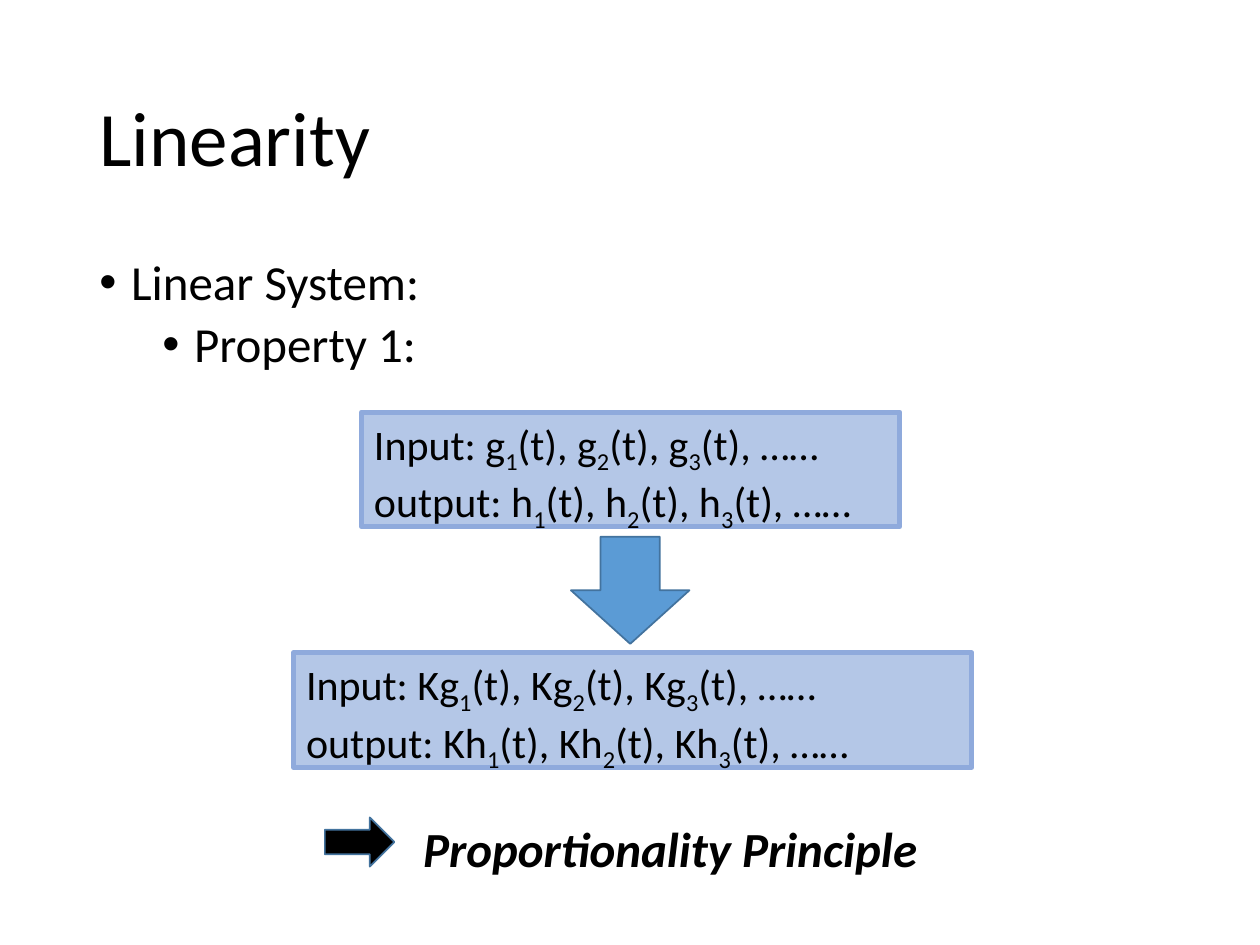
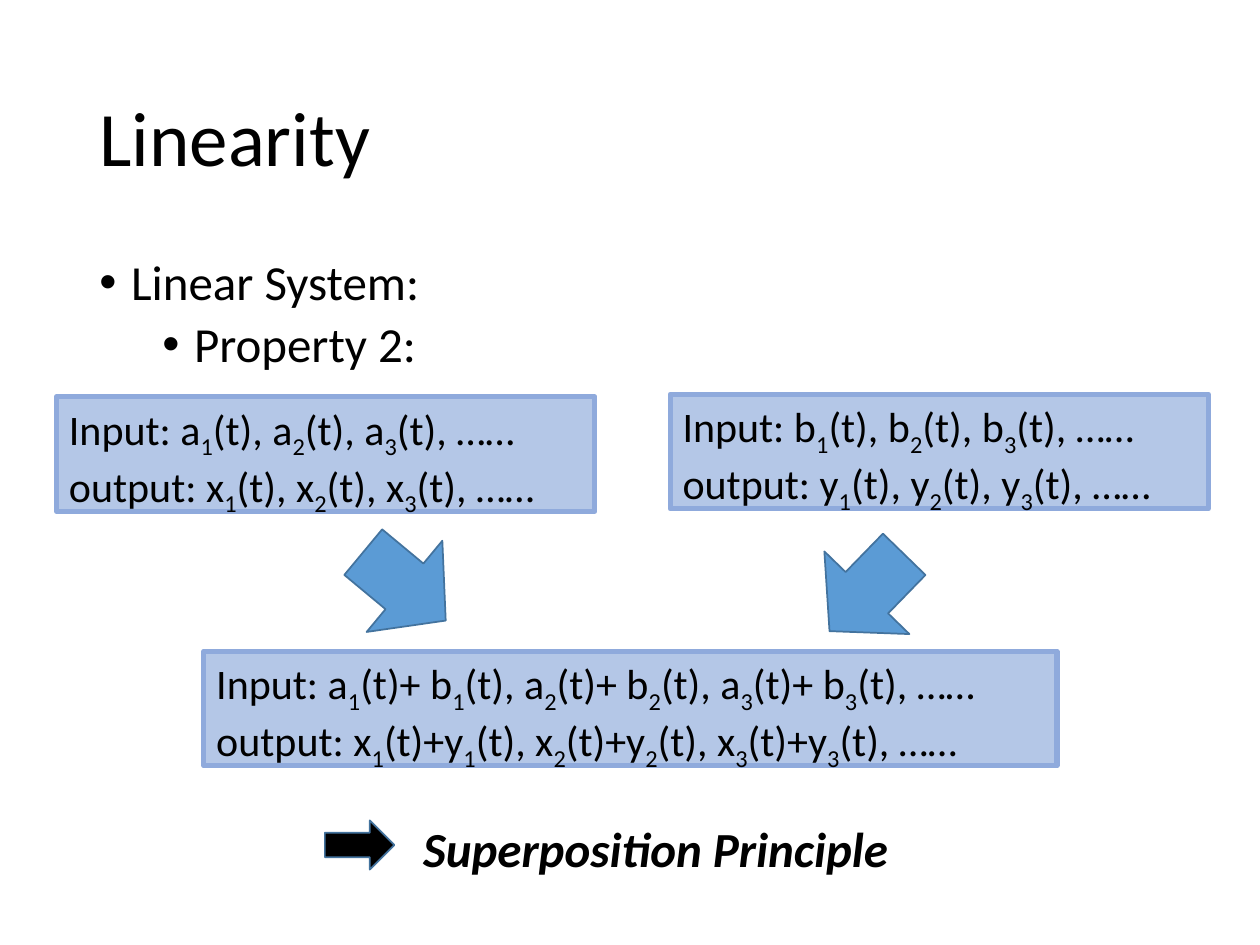
from itertools import groupby

from lxml.etree import SubElement
from pptx import Presentation
from pptx.dml.color import RGBColor
from pptx.enum.shapes import MSO_SHAPE
from pptx.enum.text import MSO_ANCHOR, MSO_AUTO_SIZE, PP_ALIGN
from pptx.oxml.ns import qn
from pptx.util import Cm, Pt

COLORS = {
    "text": "000000",
    "box": "B4C7E7",
    "edge": "8FAADC",
    "arrow": "5B9BD5",
    "rim": "43739E",
}
TITLE = {"size": Pt(44), "name": "Calibri"}
LIST = {"size": Pt(28), "name": "Calibri"}
MATH = {"size": Pt(24), "name": "Calibri"}
CLAIM = {"size": Pt(28), "name": "Calibri", "bold": True, "italic": True}
BOX_WIDTH, BOX_HEIGHT = 10.85, 2.31


def color(key):
    return RGBColor.from_string(COLORS[key])


def apply(target, values):
    for name, value in values.items():
        setattr(target, name, value)


def style(font, values):
    apply(font, values)
    font.color.rgb = color("text")


def place(shape, left, top, width, height):
    sizes = {"left": left, "top": top, "width": width, "height": height}
    apply(shape, {name: Cm(value) for name, value in sizes.items()})


def bullet(par, indent):
    props = par._p.get_or_add_pPr()
    props.set("marL", str(Cm(indent)))
    props.set("indent", str(-Cm(0.64)))
    SubElement(props, qn("a:buFont"), typeface="Arial")
    SubElement(props, qn("a:buChar"), char="•")


def add_title(slide, text):
    title = slide.shapes.title
    place(title, 1.75, 1.02, 21.9, 3.68)
    title.text_frame.vertical_anchor = MSO_ANCHOR.MIDDLE
    par = title.text_frame.paragraphs[0]
    apply(par, {"text": text, "alignment": PP_ALIGN.LEFT, "line_spacing": 0.9})
    style(par.runs[0].font, TITLE)


def add_list(slide, lines):
    body = slide.placeholders[1]
    place(body, 1.75, 5.08, 21.9, 12.09)
    frame = body.text_frame
    frame.text = "\n".join(lines)
    for level, par in enumerate(frame.paragraphs):
        gap = Pt(5 if level else 10)
        apply(par, {"level": level, "line_spacing": 0.9, "space_before": gap})
        bullet(par, 0.64 + 1.27 * level)
        style(par.runs[0].font, LIST)


def add_form(slide, kind, area, fill, line, weight):
    shape = slide.shapes.add_shape(kind, *map(Cm, area))
    shape.shadow.inherit = False
    shape.fill.solid()
    shape.fill.fore_color.rgb = color(fill)
    shape.line.color.rgb = color(line)
    shape.line.width = Pt(weight)
    return shape


def add_math(par, text):
    par.alignment = PP_ALIGN.LEFT
    for digit, chars in groupby(text, str.isdigit):
        run = par.add_run()
        run.text = "".join(chars)
        style(run.font, MATH)
        if digit:
            run._r.get_or_add_rPr().set("baseline", "-25000")


def add_box(slide, left, top, source, result, width=BOX_WIDTH):
    area = (left, top, width, BOX_HEIGHT)
    box = add_form(slide, MSO_SHAPE.RECTANGLE, area, "box", "edge", 3)
    frame = box.text_frame
    apply(frame, {
        "word_wrap": True,
        "vertical_anchor": MSO_ANCHOR.TOP,
        "auto_size": MSO_AUTO_SIZE.SHAPE_TO_FIT_TEXT,
    })
    pars = frame.paragraphs[0], frame.add_paragraph()
    for par, label, term in zip(pars, ("Input", "output"), (source, result)):
        terms = [term.replace("#", digit) for digit in "123"]
        add_math(par, f"{label}: {', '.join(terms)}, ……")


def add_arrow(slide, left, top, angle=0):
    area = (left, top, 2.39, 2.16)
    arrow = add_form(slide, MSO_SHAPE.DOWN_ARROW, area, "arrow", "rim", 1)
    arrow.rotation = angle


def add_claim(slide, text, top):
    area = (6.55, top, 1.4, 0.99)
    add_form(slide, MSO_SHAPE.RIGHT_ARROW, area, "text", "rim", 1)
    box = slide.shapes.add_textbox(*map(Cm, (8.28, 16.38, 12.7, 1.45)))
    frame = box.text_frame
    apply(frame, {
        "text": text,
        "word_wrap": True,
        "auto_size": MSO_AUTO_SIZE.SHAPE_TO_FIT_TEXT,
    })
    style(frame.paragraphs[0].runs[0].font, CLAIM)


def add_slide(deck, number):
    slide = deck.slides.add_slide(deck.slide_layouts[1])
    add_title(slide, "Linearity")
    add_list(slide, ["Linear System:", f"Property {number}:"])
    return slide


def main():
    deck = Presentation()
    deck.slide_width, deck.slide_height = Cm(25.4), Cm(19.05)

    slide = add_slide(deck, 1)
    add_box(slide, 7.29, 8.31, "g#(t)", "h#(t)")
    add_box(slide, 5.92, 13.16, "Kg#(t)", "Kh#(t)", 13.67)
    add_arrow(slide, 11.51, 10.82)
    add_claim(slide, "Proportionality Principle", 16.48)

    slide = add_slide(deck, 2)
    add_box(slide, 1.14, 8, "a#(t)", "x#(t)")
    add_box(slide, 13.51, 7.95, "b#(t)", "y#(t)")
    add_box(slide, 4.11, 13.13, "a#(t)+ b#(t)", "x#(t)+y#(t)", 17.2)
    add_arrow(slide, 6.96, 10.74, 309.7)
    add_arrow(slide, 16.28, 10.87, 44.2)
    add_claim(slide, "Superposition Principle", 16.54)

    deck.save("out.pptx")


if __name__ == "__main__":
    main()
